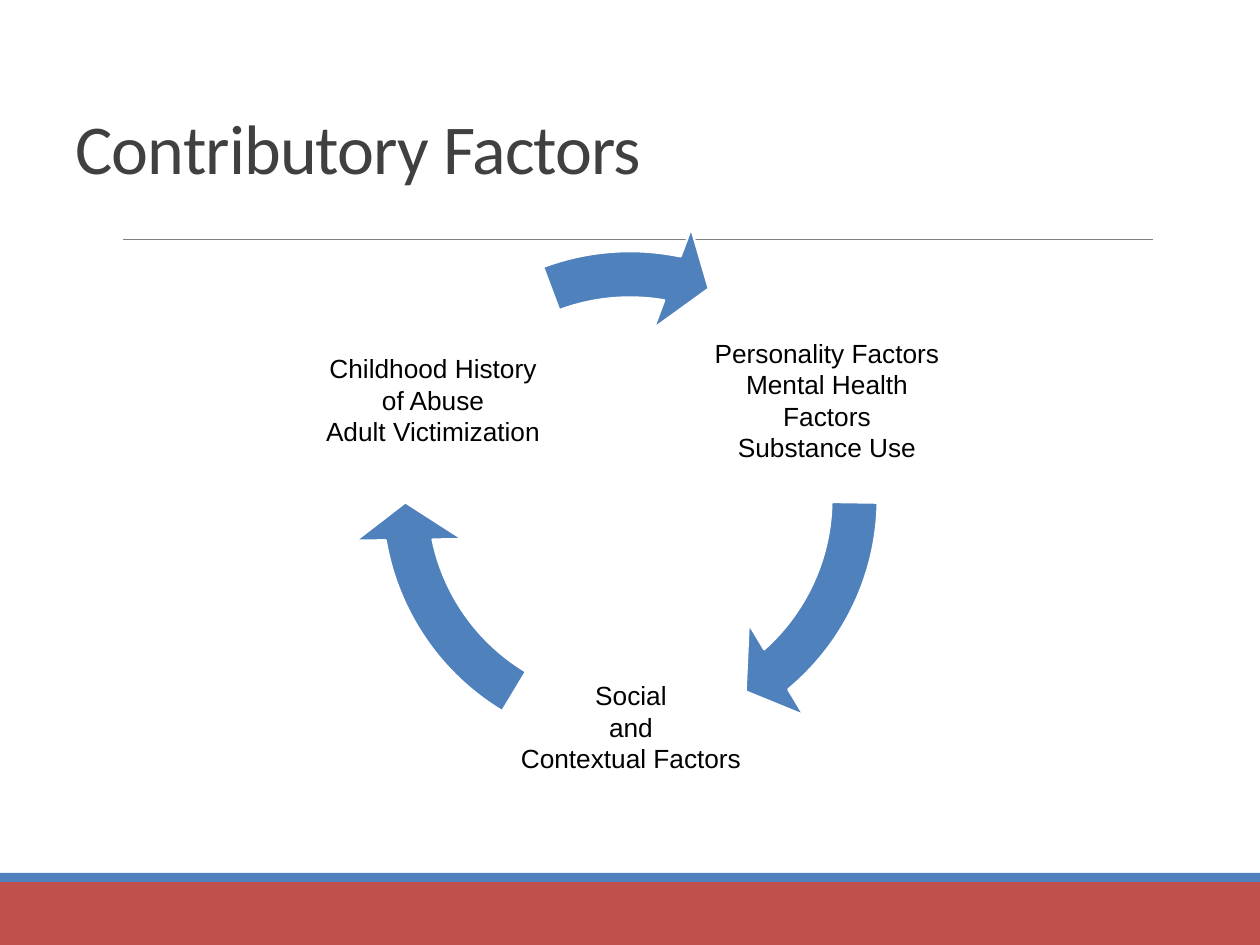
from pptx import Presentation
from pptx.dml.color import RGBColor
from pptx.enum.shapes import MSO_CONNECTOR, MSO_SHAPE
from pptx.enum.text import MSO_ANCHOR, PP_ALIGN
from pptx.oxml.ns import qn
from pptx.util import Emu, Pt
from lxml import etree

PX = 914400 // 126


def px(*lengths):
    return [Emu(length * PX) for length in lengths]


def color(hex_string):
    return RGBColor.from_string(hex_string)


prs = Presentation()
prs.slide_width, prs.slide_height = px(1260, 945)
slide = prs.slides.add_slide(prs.slide_layouts[5])
shapes = slide.shapes

# Title
title = shapes.title
title.left, title.top, title.width, title.height = px(63, 38, 1134, 157)
title.text_frame.text = "Contributory Factors"
title.text_frame.vertical_anchor = MSO_ANCHOR.BOTTOM
heading = title.text_frame.paragraphs[0]
heading.alignment = PP_ALIGN.LEFT
heading.line_spacing = 0.85
heading_run = heading.runs[0]
heading_run.font.name = "Calibri"
heading_run.font.size = Pt(40)
heading_run.font.color.rgb = color("404040")
heading_run.font._element.set("spc", "-50")

# Footer bands
for top, height, fill in [(882, 63, "C0504D"), (873, 9, "4F81BD")]:
    band = shapes.add_shape(MSO_SHAPE.RECTANGLE, *px(0, top, 1260, height))
    band.shadow.inherit = False
    band.fill.solid()
    band.fill.fore_color.rgb = color(fill)
    band.line.fill.background()

# Rule under the title
rule = shapes.add_connector(MSO_CONNECTOR.STRAIGHT, *px(123, 239, 1153, 239))
rule.line.color.rgb = color("808080")
rule.line.width = Pt(0.5)
etree.SubElement(rule._element.spPr, qn("a:effectLst"))

# Cycle: each factor with its box corner and the arrow's end and start angles
cycle = [
    (709, 282, ["Personality Factors", "Mental Health Factors", "Substance Use"], 29.62, 0.53),
    (513, 609, ["Social", "and", "Contextual Factors"], 101.7, 72.62),
    (315, 282, ["Childhood History", "of Abuse", "Adult Victimization"], 168.55, 149.69),
]
for left, top, lines, arrow_end, arrow_start in cycle:
    factor = shapes.add_textbox(*px(left, top, 236, 236)).text_frame
    factor.word_wrap = True
    factor.vertical_anchor = MSO_ANCHOR.MIDDLE
    factor.margin_left, factor.margin_top, factor.margin_right, factor.margin_bottom = px(2, 2, 2, 2)
    factor.text = "\n".join(lines)
    for line in factor.paragraphs:
        line.alignment = PP_ALIGN.CENTER
        line.line_spacing = Pt(18)
        line.runs[0].font.name = "Arial"
        line.runs[0].font.size = Pt(15)
        line.runs[0].font.color.rgb = color("000000")

    arrow = shapes.add_shape(MSO_SHAPE.CIRCULAR_ARROW, *px(352, 221, 556, 556))
    for index, value in enumerate([0.083, 5.77, arrow_end, arrow_start, 0.096]):
        arrow.adjustments[index] = value
    arrow.shadow.inherit = False
    arrow.fill.solid()
    arrow.fill.fore_color.rgb = color("4F81BD")
    arrow.line.color.rgb = color("FFFFFF")
    arrow.line.width = Pt(1.25)

prs.save("out.pptx")
